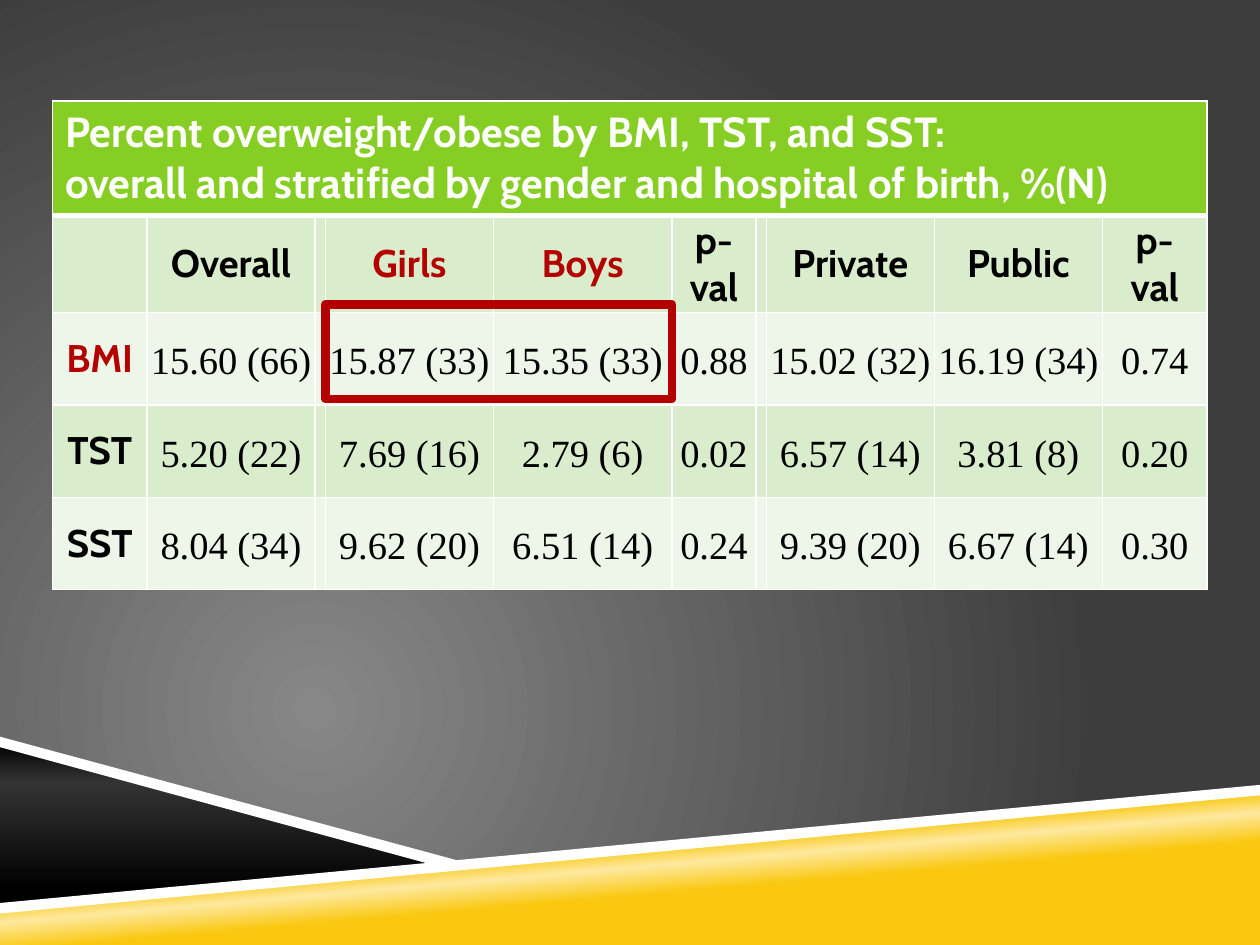
from lxml.etree import SubElement
from pptx import Presentation
from pptx.dml.color import RGBColor
from pptx.enum.shapes import MSO_SHAPE
from pptx.enum.text import MSO_ANCHOR as Anchor, PP_ALIGN as Align
from pptx.oxml.ns import qn
from pptx.util import Pt

WHITE = RGBColor(0xFF, 0xFF, 0xFF)
BLACK = RGBColor(0x00, 0x00, 0x00)
CHARCOAL = RGBColor(0x33, 0x33, 0x33)
GRAY = RGBColor(0x87, 0x87, 0x87)
DARK_GRAY = RGBColor(0x3D, 0x3D, 0x3D)
YELLOW = RGBColor(0xFA, 0xC8, 0x10)
PALE_YELLOW = RGBColor(0xFD, 0xE9, 0x9F)
GREEN = RGBColor(0x86, 0xCE, 0x24)
LIGHT_GREEN = RGBColor(0xD9, 0xED, 0xCD)
PALE_GREEN = RGBColor(0xED, 0xF6, 0xE8)
RED = RGBColor(0xB4, 0x00, 0x00)

HEADING_FONT = "Cabin"
NUMBER_FONT = "Times New Roman"

WIDTH, HEIGHT = 720, 540
COLUMN_WIDTHS = [54, 96, 6, 96, 102, 48, 6, 96, 96, 60]
ROW_HEIGHTS = [60.5, 55.5, 52.8, 52.8, 52.8]
TITLE = [
    "Percent overweight/obese by BMI, TST, and SST:",
    "overall and stratified by gender and hospital of birth, %(N)",
]
ROWS = [
    ["", "Overall", "", "Girls", "Boys", "p-\nval", "", "Private", "Public", "p-\nval"],
    ["BMI", "15.60 (66)", "", "15.87 (33)", "15.35 (33)", "0.88", "",
     "15.02 (32)", "16.19 (34)", "0.74"],
    ["TST", "5.20 (22)", "", "7.69 (16)", "2.79 (6)", "0.02", "",
     "6.57 (14)", "3.81 (8)", "0.20"],
    ["SST", "8.04 (34)", "", "9.62 (20)", "6.51 (14)", "0.24", "",
     "9.39 (20)", "6.67 (14)", "0.30"],
]
RED_LABELS = {"Girls", "Boys", "BMI"}


def set_gradient(fill, owner, stops, angle=None):
    """Fill with (percent, colour) stops: linear at an angle, else circular."""
    fill.gradient()
    gradient = owner.find(".//" + qn("a:gradFill"))
    for child in list(gradient):
        gradient.remove(child)
    stop_list = SubElement(gradient, qn("a:gsLst"))
    for percent, color in stops:
        stop = SubElement(stop_list, qn("a:gs"), pos=str(percent * 1000))
        SubElement(stop, qn("a:srgbClr"), val=str(color))
    if angle is None:
        circle = SubElement(gradient, qn("a:path"), path="circle")
        SubElement(circle, qn("a:fillToRect"), l="50000", t="100000", r="100000", b="50000")
    else:
        SubElement(gradient, qn("a:lin"), ang=str(angle * 60000), scaled="0")


def add_polygon(slide, box, points):
    left, top = box[:2]
    corners = [(Pt(left + x), Pt(top + y)) for x, y in points]
    builder = slide.shapes.build_freeform(*corners[0], scale=1.0)
    builder.add_line_segments(corners[1:], close=True)
    shape = builder.convert_to_shape()
    shape.shadow.inherit = False
    shape.line.fill.background()
    return shape


def add_backdrop(slide, box):
    set_gradient(slide.background.fill, slide.element, [(0, GRAY), (100, DARK_GRAY)])
    width, height = box[2:]

    # Yellow floor and black wedge
    floor = add_polygon(slide, box, [(0, 519), (width, 451.5), (width, height), (0, height)])
    set_gradient(floor.fill, floor.element,
                 [(39, YELLOW), (50, PALE_YELLOW), (58, YELLOW)], angle=265)
    wedge = add_polygon(slide, box, [(0, 424), (258.5, 493), (0, 519)])
    set_gradient(wedge.fill, wedge.element,
                 [(0, BLACK), (24, CHARCOAL), (90, BLACK)], angle=90)

    # White edges
    for points in (
        [(width, 448.5), (0, 516), (0, 522), (width, 454.5)],
        [(0, 421), (0, 427), (252, 495.5), (270, 494)],
    ):
        edge = add_polygon(slide, box, points)
        edge.fill.solid()
        edge.fill.fore_color.rgb = WHITE


def style_cell(cell, color, top=1, bottom=1):
    properties = cell._tc.get_or_add_tcPr()
    for side, points in (("L", 1), ("R", 1), ("T", top), ("B", bottom)):
        border = SubElement(properties, qn("a:ln" + side), w=str(Pt(points)))
        solid = SubElement(border, qn("a:solidFill"))
        SubElement(solid, qn("a:srgbClr"), val=str(WHITE))
    cell.fill.solid()
    cell.fill.fore_color.rgb = color


def write_cell(cell, lines, font_name, size, color, bold, align, spacing=None):
    frame = cell.text_frame
    for index, line in enumerate(lines):
        paragraph = frame.add_paragraph() if index else frame.paragraphs[0]
        paragraph.alignment = align
        paragraph.line_spacing = spacing
        run = paragraph.add_run()
        run.text = line
        run.font.name = font_name
        run.font.size = Pt(size)
        run.font.bold = bold
        run.font.color.rgb = color


def add_results_table(slide, box):
    frame = slide.shapes.add_table(
        len(ROW_HEIGHTS), len(COLUMN_WIDTHS), *(Pt(value) for value in box))
    table = frame.table
    table.first_row = table.horz_banding = False
    for column, width in zip(table.columns, COLUMN_WIDTHS):
        column.width = Pt(width)
    for row, height in zip(table.rows, ROW_HEIGHTS):
        row.height = Pt(height)

    # Title row across all columns
    for cell in table.rows[0].cells:
        style_cell(cell, GREEN, bottom=3)
    title = table.cell(0, 0)
    title.merge(table.cell(0, len(COLUMN_WIDTHS) - 1))
    write_cell(title, TITLE, HEADING_FONT, 24, WHITE, True, Align.LEFT)

    # Headings and values
    for row_number, texts in enumerate(ROWS, start=1):
        for column_number, text in enumerate(texts):
            cell = table.cell(row_number, column_number)
            style_cell(cell, LIGHT_GREEN if row_number % 2 else PALE_GREEN,
                       top=3 if row_number == 1 else 1)
            cell.margin_left = cell.margin_right = 0
            cell.margin_top = cell.margin_bottom = 0
            cell.vertical_anchor = Anchor.MIDDLE
            if not text:
                continue
            heading = row_number == 1 or column_number == 0
            write_cell(cell, text.split("\n"),
                       HEADING_FONT if heading else NUMBER_FONT, 22,
                       RED if text in RED_LABELS else BLACK,
                       heading, Align.CENTER, None if heading else 1.15)


def add_highlight(slide, box):
    shape = slide.shapes.add_shape(MSO_SHAPE.RECTANGLE, *(Pt(value) for value in box))
    shape.shadow.inherit = False
    shape.fill.background()
    shape.line.color.rgb = RED
    shape.line.width = Pt(5)
    SubElement(shape.element.spPr.find(qn("a:ln")), qn("a:round"))


def main():
    presentation = Presentation()
    presentation.slide_width, presentation.slide_height = Pt(WIDTH), Pt(HEIGHT)
    slide = presentation.slides.add_slide(presentation.slide_layouts[6])
    add_backdrop(slide, (0, 0, WIDTH, HEIGHT))
    add_results_table(slide, (30, 57.6, sum(COLUMN_WIDTHS), sum(ROW_HEIGHTS)))
    add_highlight(slide, (186, 174, 198, 54))
    presentation.save("out.pptx")


if __name__ == "__main__":
    main()
